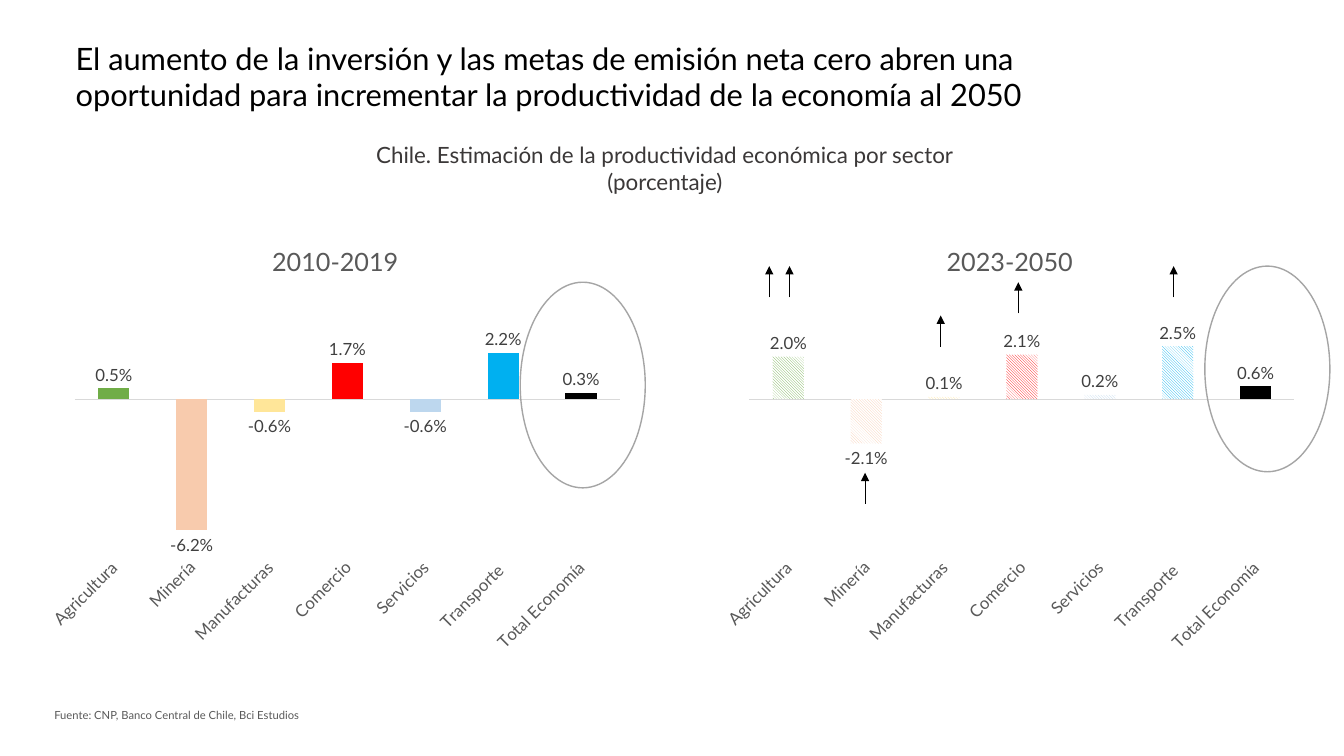
from lxml.etree import SubElement
from pptx import Presentation
from pptx.chart.data import CategoryChartData
from pptx.dml.color import RGBColor
from pptx.enum.chart import (XL_CHART_TYPE as ChartType, XL_LABEL_POSITION as LabelPosition,
                             XL_TICK_LABEL_POSITION as TickLabels, XL_TICK_MARK as TickMark)
from pptx.enum.dml import MSO_PATTERN as Pattern
from pptx.enum.shapes import MSO_CONNECTOR as Connector, MSO_SHAPE as Shape
from pptx.enum.text import MSO_AUTO_SIZE as AutoSize, PP_ALIGN as Align
from pptx.oxml.ns import qn
from pptx.util import Inches, Pt

FONT = "Lato"
COLORS = {"black": "000000", "white": "FFFFFF", "subtitle": "3B3838", "label": "404040",
          "muted": "595959", "axis": "D9D9D9", "ring": "A5A5A5"}
SECTORS = {"Agricultura": "70AD47", "Minería": "F8CBAD", "Manufacturas": "FFE699",
           "Comercio": "FF0000", "Servicios": "BDD7EE", "Transporte ": "00B0F0",
           "Total Economía": "000000"}
PAST = (0.005, -0.062, -0.006, 0.017, -0.006, 0.022, 0.003)
FUTURE = (0.02, -0.021, 0.001, 0.021, 0.002, 0.025, 0.006)
PLOT_AREA = {"x": 0.063, "y": 0.157, "w": 0.915, "h": 0.582}
ARROW_HEIGHT = 0.31
ARROW_TIPS = ((0.57, 0.41), (0.77, 0.41), (1.52, 2.46), (2.27, 0.9), (3.04, 0.57), (4.58, 0.41))


def color(name):
    """Return the named colour."""
    return RGBColor.from_string(COLORS[name])


def style(font, size, name):
    """Set the face, size and colour of a font."""
    font.name, font.size, font.bold = FONT, Pt(size), False
    font.color.rgb = color(name)


def add_text(page, box, lines, size, name, align=Align.LEFT, wrap=True, inset=0.1):
    """Place a text box with one paragraph per line."""
    shape = page.shapes.add_textbox(*map(Inches, box))
    frame = shape.text_frame
    frame.word_wrap = wrap
    frame.auto_size = AutoSize.SHAPE_TO_FIT_TEXT
    frame.margin_left = frame.margin_right = Inches(inset)
    for index, line in enumerate(lines):
        para = frame.paragraphs[0] if index == 0 else frame.add_paragraph()
        para.alignment = align
        span = para.add_run()
        span.text = line
        style(span.font, size, name)


def paint_bars(series, hatched):
    """Colour each bar by sector, hatching all but the total when asked."""
    series.invert_if_negative = False
    for index, sector_color in enumerate(SECTORS.values()):
        fill = series.points[index].format.fill
        if hatched and index < len(SECTORS) - 1:
            fill.patterned()
            fill.pattern = Pattern.DARK_DOWNWARD_DIAGONAL
            fill.fore_color.rgb = RGBColor.from_string(sector_color)
            fill.back_color.rgb = color("white")
        else:
            fill.solid()
            fill.fore_color.rgb = RGBColor.from_string(sector_color)


def fix_plot_area(chart):
    """Pin the inner plot area and slant the category labels."""
    plot_area = chart.element.find(".//" + qn("c:plotArea"))
    layout = plot_area.find(qn("c:layout"))
    if layout is None:
        layout = SubElement(plot_area, qn("c:layout"))
        plot_area.insert(0, layout)
    manual = SubElement(layout, qn("c:manualLayout"))
    settings = {"layoutTarget": "inner", "xMode": "edge", "yMode": "edge", **PLOT_AREA}
    for tag, value in settings.items():
        SubElement(manual, qn("c:" + tag)).set("val", str(value))
    body = plot_area.find(qn("c:catAx")).find(qn("c:txPr")).find(qn("a:bodyPr"))
    body.set("rot", "-2700000")
    body.set("vert", "horz")


def add_period(page, box, period, values, ring, hatched=False):
    """Place the column chart of one period and ring its total."""
    data = CategoryChartData(number_format="0.0%")
    data.categories = list(SECTORS)
    data.add_series(period, values)
    chart = page.shapes.add_chart(ChartType.COLUMN_CLUSTERED, *map(Inches, box), data).chart
    style(chart.font, 12, "black")
    chart.has_legend = False
    chart.has_title = True
    span = chart.chart_title.text_frame.paragraphs[0].add_run()
    span.text = period
    style(span.font, 18, "muted")
    chart.chart_title.include_in_layout = False

    values_axis = chart.value_axis
    values_axis.minimum_scale, values_axis.maximum_scale = -0.07, 0.05
    values_axis.has_major_gridlines = False
    values_axis.visible = False
    sectors_axis = chart.category_axis
    sectors_axis.tick_label_position = TickLabels.LOW
    sectors_axis.major_tick_mark = sectors_axis.minor_tick_mark = TickMark.NONE
    sectors_axis.format.line.color.rgb = color("axis")
    sectors_axis.format.line.width = Pt(0.75)
    style(sectors_axis.tick_labels.font, 12, "muted")

    plot = chart.plots[0]
    plot.gap_width = 150
    plot.vary_by_categories = False
    plot.has_data_labels = True
    labels = plot.data_labels
    labels.show_value = True
    labels.number_format, labels.number_format_is_linked = "0.0%", False
    labels.position = LabelPosition.OUTSIDE_END
    style(labels.font, 12, "label")
    paint_bars(plot.series[0], hatched)
    fix_plot_area(chart)

    left, top = box[0] + ring[0], box[1] + ring[1]
    oval = page.shapes.add_shape(Shape.OVAL, *map(Inches, (left, top, 1.24, 2.04)))
    oval.shadow.inherit = False
    oval.fill.background()
    oval.line.color.rgb = color("ring")
    oval.line.width = Pt(1)


def add_arrows(page, box):
    """Place the upward arrows relative to the chart box."""
    for x, y in ARROW_TIPS:
        left, tip = box[0] + x, box[1] + y
        ends = map(Inches, (left, tip + ARROW_HEIGHT, left, tip))
        arrow = page.shapes.add_connector(Connector.STRAIGHT, *ends)
        arrow.line.color.rgb = color("black")
        arrow.line.width = Pt(0.5)
        SubElement(arrow.line._get_or_add_ln(), qn("a:tailEnd")).set("type", "triangle")
        SubElement(arrow._element.spPr, qn("a:effectLst"))


def main():
    """Build the slide and save it."""
    deck = Presentation()
    deck.slide_width, deck.slide_height = Inches(13.33), Inches(7.5)
    page = deck.slides.add_slide(deck.slide_layouts[6])
    past_box, future_box = (0.37, 2.23, 5.91, 4.33), (7.06, 2.23, 5.91, 4.33)
    add_text(page, (3.43, 1.35, 6.33, 0.64),
             ("Chile. Estimación de la productividad económica por sector", "(porcentaje)"),
             16, "subtitle", Align.CENTER)
    add_period(page, past_box, "2010-2019", PAST, (4.79, 0.57))
    add_period(page, future_box, "2023-2050", FUTURE, (4.89, 0.41), hatched=True)
    add_arrows(page, future_box)
    add_text(page, (0.7, 0.34, 10.75, 0.84),
             ("El aumento de la inversión y las metas de emisión neta cero abren una "
              "oportunidad para incrementar la productividad de la economía al 2050",),
             22, "black", inset=0.05)
    add_text(page, (0.44, 6.98, 2.68, 0.24),
             ("Fuente: CNP, Banco Central de Chile, Bci Estudios",), 8, "muted", wrap=False)
    deck.save("out.pptx")


if __name__ == "__main__":
    main()
